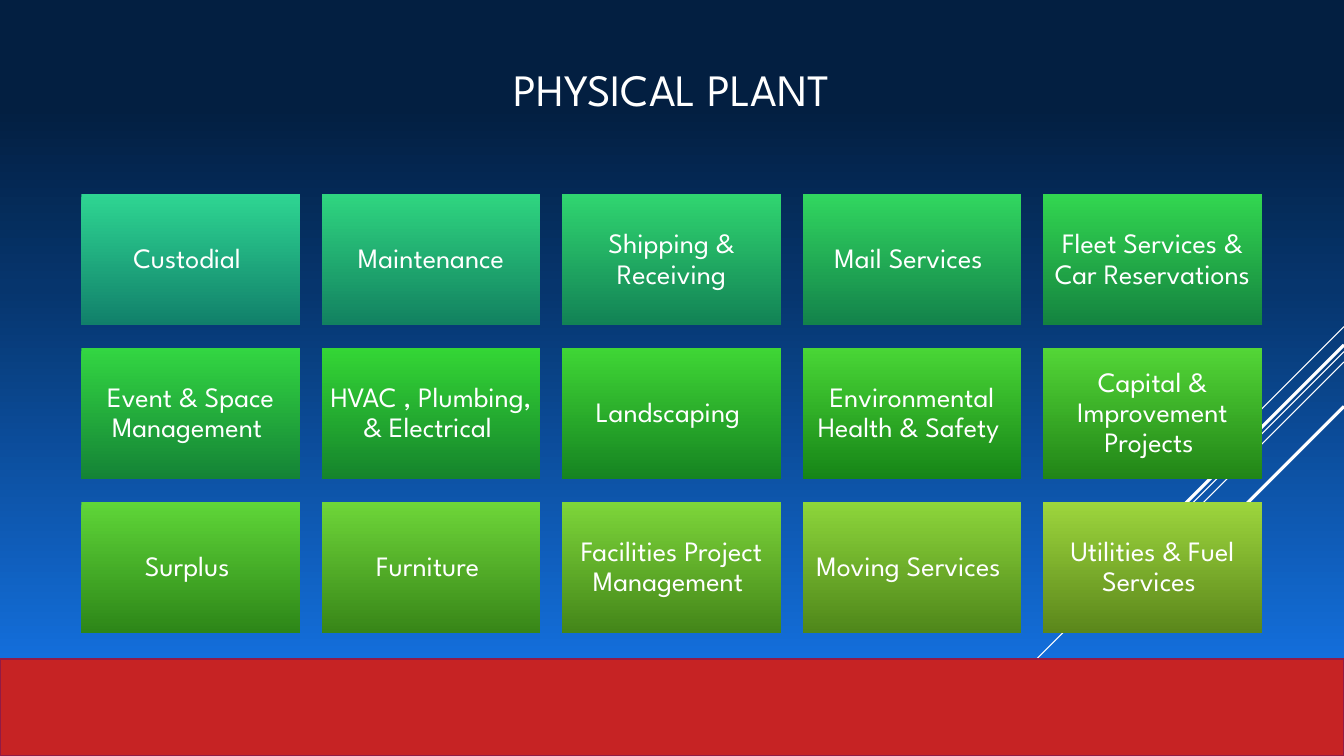
import copy

import pptx
import pptx.dml.color
import pptx.enum.shapes
import pptx.enum.text
import pptx.oxml
import pptx.util

Cm = pptx.util.Cm
Pt = pptx.util.Pt

WIDE, HIGH = 33.87, 19.05
FACE = "League Spartan"
WHITE = "FFFFFF"
COLS = 5

# Label, top colour, bottom colour
TILES = [
    ("Custodial ", "2ED592", "11806A"),
    ("Maintenance", "2FD580", "128160"),
    ("Shipping & Receiving", "30D570", "128255"),
    ("Mail Services ", "31D65F", "13824B"),
    ("Fleet Services & Car Reservations", "32D650", "148340"),
    ("Event & Space Management ", "33D642", "148336"),
    ("HVAC , Plumbing, & Electrical ", "34D635", "15842C"),
    ("Landscaping ", "3FD635", "168421"),
    ("Environmental Health & Safety ", "49D636", "168517"),
    ("Capital & Improvement Projects ", "53D637", "218517"),
    ("Surplus ", "5FD638", "2D8618"),
    ("Furniture ", "6ED639", "388618"),
    ("Facilities Project Management ", "7DD63A", "448619"),
    ("Moving Services ", "8DD63B", "4F871A"),
    ("Utilities & Fuel Services ", "9DD63D", "5B871B"),
]

# Start height at the right edge, run to the left, line width
RAYS = [
    (8.23, 2.54, 0.75),
    (8.86, 8.28, 0.75),
    (9.12, 5.26, 0.75),
    (8.69, 4.85, 2.25),
    (10.24, 3.53, 2.25),
]


def tint(code):
    return pptx.dml.color.RGBColor.from_string(code)


def apply(item, values):
    for name, value in values.items():
        setattr(item, name, value)


def blend(fill, root, stops, angle):
    """Fill with a linear gradient of (position, colour) stops."""
    fill.gradient()
    fill.gradient_angle = angle
    group = root.xpath(".//a:gsLst")[0]
    while len(group) < len(stops):
        group.append(copy.deepcopy(group[-1]))
    for stop, (place, code) in zip(fill.gradient_stops, stops):
        stop.position = place
        stop.color.rgb = tint(code)


def write(shape, text, size, inset, space):
    frame = shape.text_frame
    apply(frame, {
        "word_wrap": True,
        "vertical_anchor": pptx.enum.text.MSO_ANCHOR.MIDDLE,
        "margin_left": Cm(inset),
        "margin_right": Cm(inset),
        "margin_top": Cm(inset),
        "margin_bottom": Cm(inset),
    })
    para = frame.paragraphs[0]
    para.text = text
    apply(para, {"alignment": pptx.enum.text.PP_ALIGN.CENTER,
                 "line_spacing": space})
    apply(para.font, {"name": FACE, "size": Pt(size)})
    para.font.color.rgb = tint(WHITE)


def block(slide, left, top, width, height):
    shape = slide.shapes.add_shape(
        pptx.enum.shapes.MSO_SHAPE.RECTANGLE,
        Cm(left), Cm(top), Cm(width), Cm(height))
    shape.shadow.inherit = False
    return shape


def ray(slide, top, run, width):
    """Draw a line at 45 degrees from the right edge."""
    line = slide.shapes.add_connector(
        pptx.enum.shapes.MSO_CONNECTOR.STRAIGHT,
        Cm(WIDE), Cm(top), Cm(WIDE - run), Cm(top + run))
    line.line.color.rgb = tint(WHITE)
    line.line.width = Pt(width)
    line.element.spPr.append(pptx.oxml.parse_xml(
        '<a:effectLst xmlns:a='
        '"http://schemas.openxmlformats.org/drawingml/2006/main"/>'))


def band(slide):
    shape = block(slide, 0, 16.6, WIDE, HIGH - 16.6)
    shape.fill.solid()
    shape.fill.fore_color.rgb = tint("C62324")
    shape.line.color.rgb = tint("921A46")
    shape.line.width = Pt(1.25)


def title(slide):
    box = slide.shapes.add_textbox(Cm(6.2), Cm(0.58), Cm(21.46), Cm(3.3))
    write(box, "PHYSICAL PLANT", 32, 0.2, 1.0)


def tile(slide, index, text, upper, lower):
    row, col = divmod(index, COLS)
    shape = block(slide, 2.05 + col * 6.06, 4.9 + row * 3.87, 5.51, 3.3)
    blend(shape.fill, shape.element, [(0, upper), (1, lower)], 270)
    shape.line.fill.background()
    write(shape, text, 20, 0.2, 0.9)


def main():
    deck = pptx.Presentation()
    apply(deck, {"slide_width": Cm(WIDE), "slide_height": Cm(HIGH)})
    slide = deck.slides.add_slide(deck.slide_layouts[6])

    # Backdrop
    blend(slide.background.fill, slide.element,
          [(0.02, "167BF3"), (0.62, "06356D"), (0.86, "031F41")], 90)
    for top, run, width in RAYS:
        ray(slide, top, run, width)
    band(slide)

    # Heading and grid of services
    title(slide)
    for index, (text, upper, lower) in enumerate(TILES):
        tile(slide, index, text, upper, lower)

    deck.save("out.pptx")


if __name__ == "__main__":
    main()
